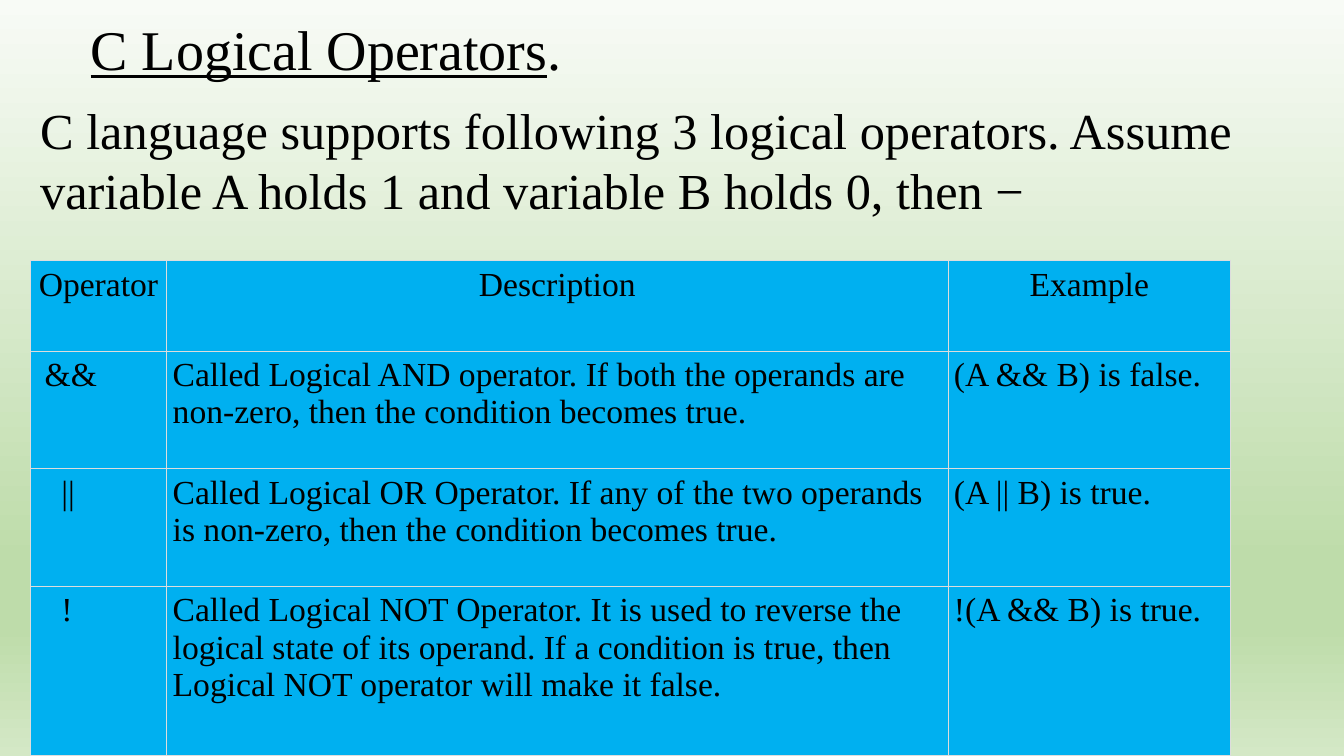
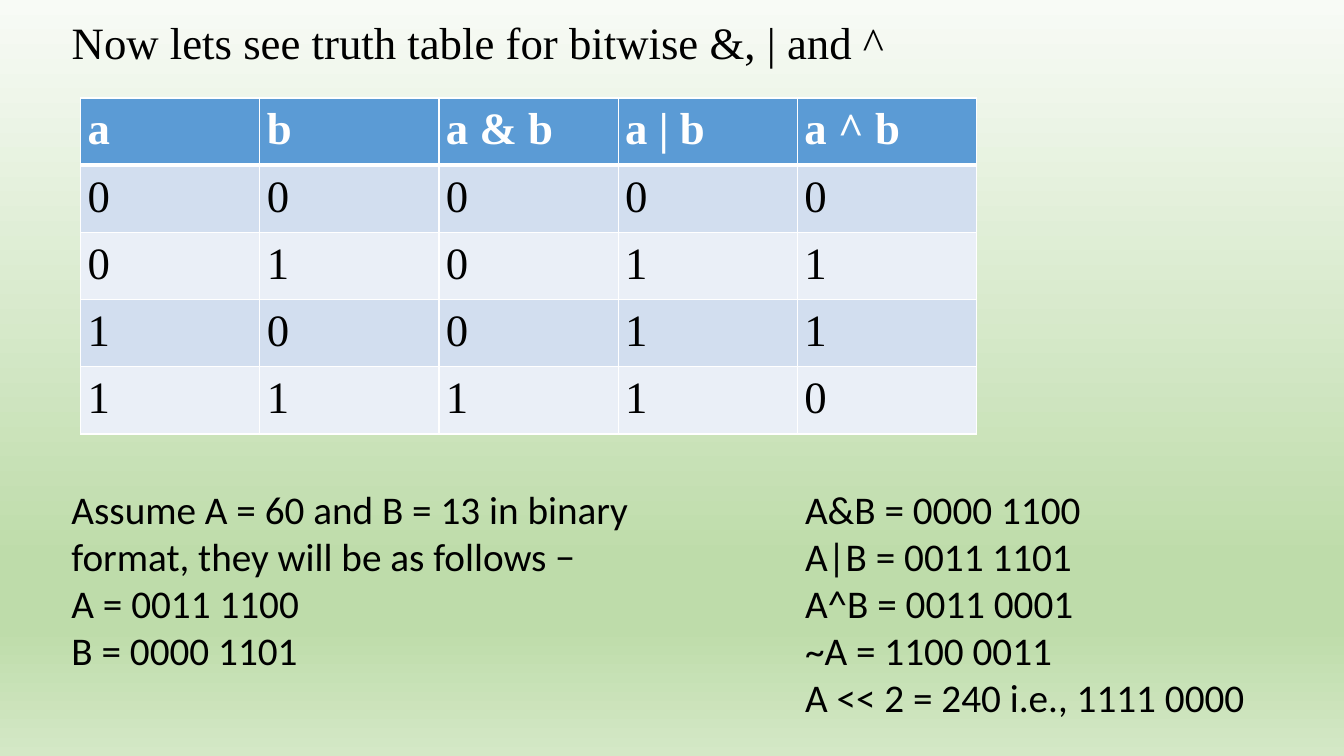
from dataclasses import dataclass

from lxml.etree import SubElement
from pptx import Presentation
from pptx.dml.color import RGBColor
from pptx.enum.text import MSO_ANCHOR, MSO_AUTO_SIZE, PP_ALIGN
from pptx.oxml import parse_xml
from pptx.oxml.ns import nsdecls, qn
from pptx.util import Pt


@dataclass(frozen=True)
class Theme:
    serif: str = "Times New Roman"
    sans: str = "Calibri"
    black: str = "000000"
    white: str = "FFFFFF"
    sky: str = "00B0F0"
    grid: str = "DDDDDD"
    header: str = "5B9BD5"
    bands: tuple = ("D2DEEF", "EAEFF7")
    backdrop: tuple = ((0, "F8FBF6"), (74, "BEDCAA"), (83, "BEDCAA"), (100, "D4E8C6"))
    title: int = 40
    lead: int = 36
    large: int = 32
    body: int = 28
    small: int = 24


@dataclass(frozen=True)
class TableStyle:
    size: int
    inset: float
    header_fill: str
    header_color: str
    header_bold: bool
    header_align: PP_ALIGN
    body_fills: tuple
    border: str
    border_width: float
    header_rule: float


class Lesson:
    def __init__(self, theme):
        self.theme = theme
        self.deck = Presentation()
        self.deck.slide_width, self.deck.slide_height = Pt(960), Pt(540)
        self.page = None
        self.paint_master()

    def paint_master(self):
        master = self.deck.slide_master
        fill = master.background.fill
        fill.gradient()
        fill.gradient_angle = 270
        stops = master.element.find(".//" + qn("a:gsLst"))
        for stop in list(stops):
            stops.remove(stop)
        for percent, color in self.theme.backdrop:
            stop = SubElement(stops, qn("a:gs"), pos=str(percent * 1000))
            SubElement(stop, qn("a:srgbClr"), val=color)

    def style(self, para, size, font, color=None, bold=False, align=PP_ALIGN.LEFT):
        para.alignment = align
        para.font.size = Pt(size)
        para.font.name = font
        para.font.bold = bold
        para.font.color.rgb = RGBColor.from_string(color or self.theme.black)

    def prepare(self, frame):
        frame.word_wrap = True
        frame.auto_size = MSO_AUTO_SIZE.NONE
        frame.vertical_anchor = MSO_ANCHOR.TOP

    def add_page(self, left, top, width, height, size, spans):
        self.page = self.deck.slides.add_slide(self.deck.slide_layouts[5])
        box = self.page.shapes.title
        box.left, box.top, box.width, box.height = map(Pt, (left, top, width, height))
        self.prepare(box.text_frame)
        para = box.text_frame.paragraphs[0]
        self.style(para, size, self.theme.serif)
        for text, underlined in spans:
            span = para.add_run()
            span.text = text
            span.font.underline = underlined

    def add_text(self, left, top, width, height, size, font, lines):
        box = self.page.shapes.add_textbox(*map(Pt, (left, top, width, height)))
        frame = box.text_frame
        self.prepare(frame)
        frame.text = "\n".join(lines)
        for para in frame.paragraphs:
            self.style(para, size, font)

    def add_table(self, left, top, widths, heights, rows, style, indents=None):
        indents = indents or {}
        frame = self.page.shapes.add_table(
            len(heights), len(widths), *map(Pt, (left, top, sum(widths), sum(heights))))
        table = frame.table
        for column, width in zip(table.columns, widths):
            column.width = Pt(width)
        for row, height in zip(table.rows, heights):
            row.height = Pt(height)
        for r, values in enumerate(rows):
            for c, text in enumerate(values):
                self.fill_cell(table.cell(r, c), text, r, style, indents.get((r, c), 0))

    def fill_cell(self, cell, text, row, style, indent):
        is_header = row == 0
        cell.text = text
        cell.margin_right = cell.margin_top = cell.margin_bottom = Pt(style.inset)
        cell.margin_left = Pt(style.inset + indent)
        body_fill = style.body_fills[(row - 1) % len(style.body_fills)]
        cell.fill.solid()
        cell.fill.fore_color.rgb = RGBColor.from_string(
            style.header_fill if is_header else body_fill)
        self.style(
            cell.text_frame.paragraphs[0], style.size, self.theme.serif,
            color=style.header_color if is_header else self.theme.black,
            bold=is_header and style.header_bold,
            align=style.header_align if is_header else PP_ALIGN.LEFT)
        for position, side in enumerate("LRTB"):
            on_rule = (row, side) in ((0, "B"), (1, "T"))
            width = Pt(style.header_rule if on_rule else style.border_width)
            cell._tc.get_or_add_tcPr().insert(position, parse_xml(
                f'<a:ln{side} {nsdecls("a")} w="{width}"><a:solidFill>'
                f'<a:srgbClr val="{style.border}"/></a:solidFill></a:ln{side}>'))


def add_logical_operators(lesson):
    theme = lesson.theme
    lesson.add_page(57.6, 6.5, 900, 55.5, theme.title,
                    [("C Logical Operators", True), (".", False)])
    lesson.add_text(21.6, 67, 930, 94.5, theme.lead, theme.serif, [
        "C language supports following 3 logical operators. "
        "Assume variable A holds 1 and variable B holds 0, then −"])
    style = TableStyle(
        size=theme.small, inset=4.3, header_fill=theme.sky, header_color=theme.black,
        header_bold=False, header_align=PP_ALIGN.CENTER, body_fills=(theme.sky,),
        border=theme.grid, border_width=0.6, header_rule=0.6)
    rows = [
        ("Operator", "Description", "Example"),
        ("&&", "Called Logical AND operator. If both the operands are non-zero, "
               "then the condition becomes true.", "(A && B) is false."),
        ("||", "Called Logical OR Operator. If any of the two operands is non-zero, "
               "then the condition becomes true.", "(A || B) is true."),
        ("!", "Called Logical NOT Operator. It is used to reverse the logical state of "
              "its operand. If a condition is true, then Logical NOT operator will make "
              "it false.", "!(A && B) is true."),
    ]
    lesson.add_table(21.6, 185.8, (97.5, 558, 202), (64.8, 84, 84, 121), rows, style,
                     indents={(1, 0): 6, (2, 0): 18, (3, 0): 18})


def add_truth_table(lesson):
    theme = lesson.theme
    lesson.add_page(44, 7, 691, 46, theme.large,
                    [("Now lets see truth table for bitwise &, | and ^", False)])
    style = TableStyle(
        size=theme.large, inset=5, header_fill=theme.header, header_color=theme.white,
        header_bold=True, header_align=PP_ALIGN.LEFT, body_fills=theme.bands,
        border=theme.white, border_width=1, header_rule=3)
    rows = [("a", "b", "a & b", "a | b", "a ^ b")]
    for a in (0, 1):
        for b in (0, 1):
            rows.append([str(value) for value in (a, b, a & b, a | b, a ^ b)])
    lesson.add_table(57.6, 70, [128] * 5, [48] * 5, rows, style)
    lesson.add_text(44, 343, 432, 143, theme.body, theme.sans, [
        "Assume A = 60 and B = 13 in binary format, they will be as follows −",
        "A = 0011 1100",
        "B = 0000 1101"])
    lesson.add_text(568, 343, 390, 177, theme.body, theme.sans, [
        "A&B = 0000 1100",
        "A|B = 0011 1101",
        "A^B = 0011 0001",
        "~A = 1100 0011",
        "A << 2 = 240 i.e., 1111 0000"])


def main():
    lesson = Lesson(Theme())
    add_logical_operators(lesson)
    add_truth_table(lesson)
    lesson.deck.save("out.pptx")


if __name__ == "__main__":
    main()
